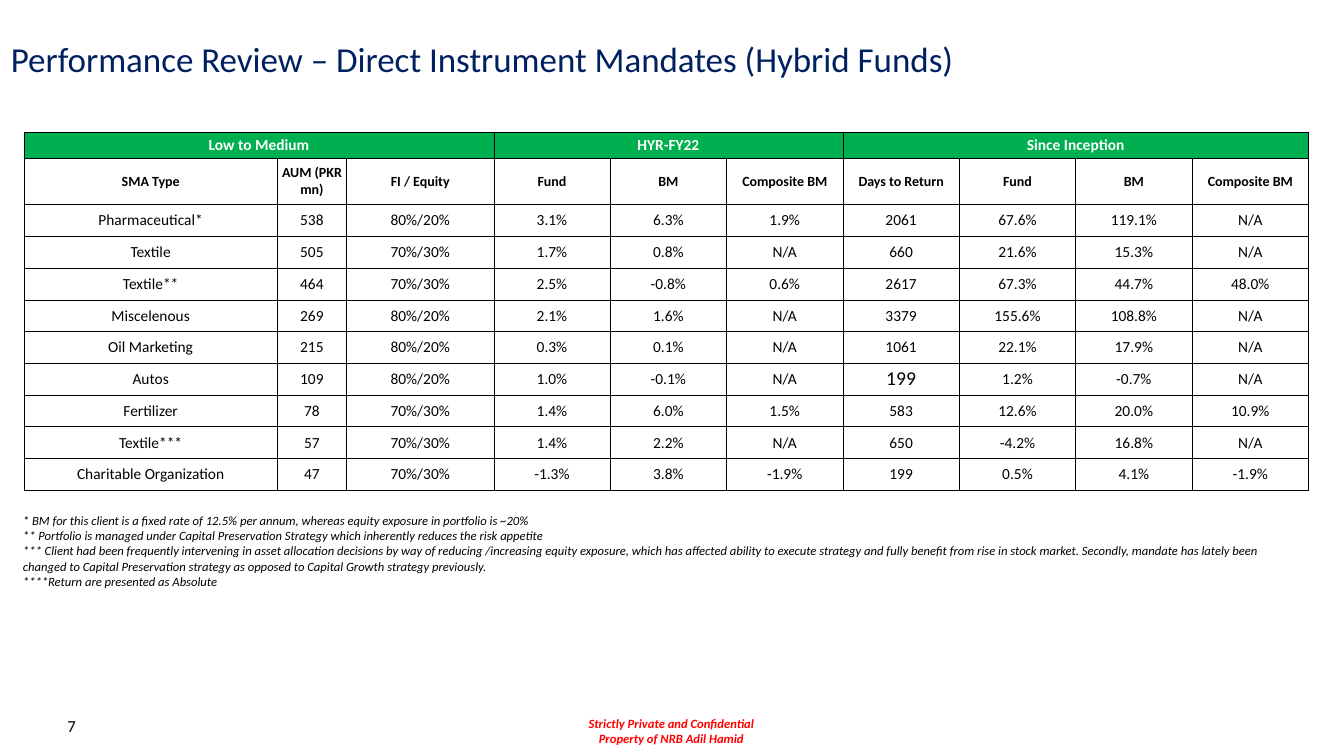
from pptx import Presentation
from pptx import util as u
from pptx.dml import color
from pptx.enum import text
from pptx.oxml import parse_xml
from pptx.oxml.ns import nsdecls

PX = u.Inches(1) // 200
FONT = "Calibri"
BLACK, WHITE, NAVY, GREEN, RED = "000000", "FFFFFF", "002060", "00B050", "FF0000"
LEFT, CENTER, RIGHT = text.PP_ALIGN.LEFT, text.PP_ALIGN.CENTER, text.PP_ALIGN.RIGHT
TOP, MIDDLE = text.MSO_ANCHOR.TOP, text.MSO_ANCHOR.MIDDLE

COLUMNS = [502, 138, 292] + [231] * 7
GROUPS = [("Low to Medium", 0, 2), ("HYR-FY22", 3, 5), ("Since Inception", 6, 9)]
HEADINGS = ["SMA Type", "AUM (PKR mn)", "FI / Equity", "Fund", "BM", "Composite BM",
            "Days to Return", "Fund", "BM", "Composite BM"]
MANDATES = [
    ["Pharmaceutical*", "538", "80%/20%", "3.1%", "6.3%", "1.9%", "2061", "67.6%", "119.1%", "N/A"],
    ["Textile", "505", "70%/30%", "1.7%", "0.8%", "N/A", "660", "21.6%", "15.3%", "N/A"],
    ["Textile**", "464", "70%/30%", "2.5%", "-0.8%", "0.6%", "2617", "67.3%", "44.7%", "48.0%"],
    ["Miscelenous", "269", "80%/20%", "2.1%", "1.6%", "N/A", "3379", "155.6%", "108.8%", "N/A"],
    ["Oil Marketing", "215", "80%/20%", "0.3%", "0.1%", "N/A", "1061", "22.1%", "17.9%", "N/A"],
    ["Autos", "109", "80%/20%", "1.0%", "-0.1%", "N/A", "199", "1.2%", "-0.7%", "N/A"],
    ["Fertilizer", "78", "70%/30%", "1.4%", "6.0%", "1.5%", "583", "12.6%", "20.0%", "10.9%"],
    ["Textile***", "57", "70%/30%", "1.4%", "2.2%", "N/A", "650", "-4.2%", "16.8%", "N/A"],
    ["Charitable Organization", "47", "70%/30%", "-1.3%", "3.8%", "-1.9%", "199", "0.5%", "4.1%", "-1.9%"],
]
ROWS = [52, 92] + [63] * len(MANDATES)
LARGE_CELL = ("Autos", 6)
NOTES = [
    "* BM for this client is a fixed rate of 12.5% per annum, whereas equity exposure in portfolio is ~20%",
    "** Portfolio is managed under Capital Preservation Strategy which inherently reduces the risk appetite",
    "*** Client had been frequently intervening in asset allocation decisions by way of reducing "
    "/increasing equity exposure, which has affected ability to execute strategy and fully benefit "
    "from rise in stock market. Secondly, mandate has lately been changed to Capital Preservation "
    "strategy as opposed to Capital Growth strategy previously.",
    "****Return are presented as Absolute",
]
FOOTER = ["Strictly Private and Confidential", "Property of NRB Adil Hamid"]


def px(n):
    return u.Emu(n * PX)


def rgb(value):
    return color.RGBColor.from_string(value)


def write(tf, lines, size=11, fill=BLACK, bold=False, italic=False, align=LEFT):
    for i, line in enumerate(lines):
        p = tf.paragraphs[0] if i == 0 else tf.add_paragraph()
        p.alignment = align
        r = p.add_run()
        r.text = line
        r.font.name, r.font.size = FONT, u.Pt(size)
        r.font.bold, r.font.italic = bold, italic
        r.font.color.rgb = rgb(fill)


def add_text(s, box, lines, anchor=TOP, wrap=True, **fmt):
    tf = s.shapes.add_textbox(*map(px, box)).text_frame
    tf.word_wrap = wrap
    tf.vertical_anchor = anchor
    write(tf, lines, **fmt)


def add_borders(cell):
    tc_pr = cell._tc.get_or_add_tcPr()
    for i, side in enumerate(("lnL", "lnR", "lnT", "lnB")):
        tc_pr.insert(i, parse_xml(
            f'<a:{side} {nsdecls("a")} w="{u.Pt(0.5)}"><a:solidFill>'
            f'<a:srgbClr val="{BLACK}"/></a:solidFill></a:{side}>'))


def fill_cell(cell, value, **fmt):
    cell.vertical_anchor = MIDDLE
    write(cell.text_frame, [value], align=CENTER, **fmt)


def add_performance_table(s, left, top):
    box = (left, top, sum(COLUMNS), sum(ROWS))
    table = s.shapes.add_table(len(ROWS), len(COLUMNS), *map(px, box)).table
    table.first_row = table.horz_banding = False
    for column, width in zip(table.columns, COLUMNS):
        column.width = px(width)
    for row, height in zip(table.rows, ROWS):
        row.height = px(height)
    for cell in table.iter_cells():
        cell.margin_left = cell.margin_right = cell.margin_top = cell.margin_bottom = 0
        cell.fill.background()
        add_borders(cell)
    for c in range(len(COLUMNS)):
        table.cell(0, c).fill.solid()
        table.cell(0, c).fill.fore_color.rgb = rgb(GREEN)
    for title, first, last in GROUPS:
        table.cell(0, first).merge(table.cell(0, last))
        fill_cell(table.cell(0, first), title, fill=WHITE, bold=True)
    for c, heading in enumerate(HEADINGS):
        fill_cell(table.cell(1, c), heading, size=10, bold=True)
    for r, mandate in enumerate(MANDATES, 2):
        for c, value in enumerate(mandate):
            size = 14 if (mandate[0], c) == LARGE_CELL else 11
            fill_cell(table.cell(r, c), value, size=size)


def main():
    prs = Presentation()
    prs.slide_width, prs.slide_height = px(2667), px(1500)
    s = prs.slides.add_slide(prs.slide_layouts[6])
    add_text(s, (1146, 1410, 372, 80), FOOTER, wrap=False, size=9, fill=RED,
             bold=True, italic=True, align=CENTER)
    add_text(s, (26, 1008, 2520, 172), NOTES, size=9, italic=True)
    add_text(s, (2, 56, 2000, 120),
             ["Performance Review – Direct Instrument Mandates (Hybrid Funds)"],
             anchor=MIDDLE, size=25, fill=NAVY)
    add_text(s, (48, 1400, 122, 80), ["7"], anchor=MIDDLE, size=12, align=RIGHT)
    add_performance_table(s, 48, 262)
    prs.save("out.pptx")


if __name__ == "__main__":
    main()
